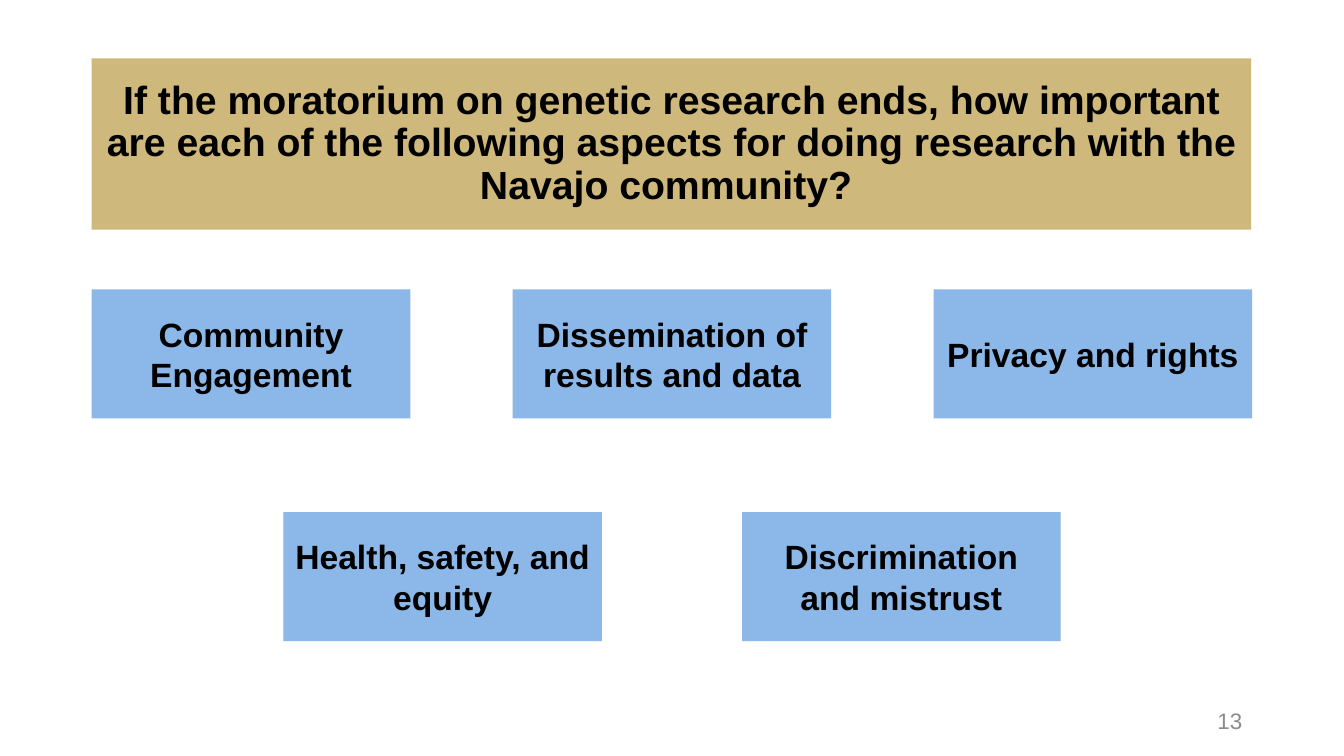
from pptx import Presentation
from pptx.dml.color import RGBColor
from pptx.enum.shapes import MSO_SHAPE
from pptx.enum.text import MSO_ANCHOR, PP_ALIGN
from pptx.util import Inches, Pt

RECTANGLE = MSO_SHAPE.RECTANGLE
MIDDLE = MSO_ANCHOR.MIDDLE
CENTER, RIGHT = PP_ALIGN.CENTER, PP_ALIGN.RIGHT

GOLD = RGBColor(0xCF, 0xB8, 0x7C)
BLUE = RGBColor(0x8B, 0xB8, 0xE8)
BLACK = RGBColor(0, 0, 0)
GRAY = RGBColor(0x8C, 0x8C, 0x8C)

QUESTION = (
    "If the moratorium on genetic research ends, how important are each of "
    "the following aspects for doing research with the Navajo community? "
)
FIRST_ASPECTS = ["Community Engagement", "Dissemination of results and data", "Privacy and rights"]
SECOND_ASPECTS = ["Health, safety, and equity", "Discrimination and mistrust"]
ASPECT_WIDTH = 3.16


def write_text(shape, text, color, size, bold, paragraph_format):
    """Fill a shape with one formatted, vertically centred paragraph."""
    frame = shape.text_frame
    frame.word_wrap = True
    frame.vertical_anchor = MIDDLE
    paragraph = frame.paragraphs[0]
    for name, value in paragraph_format.items():
        setattr(paragraph, name, value)
    run = paragraph.add_run()
    run.text = text
    font_format = {"name": "Arial", "size": Pt(size), "bold": bold}
    for name, value in font_format.items():
        setattr(run.font, name, value)
    run.font.color.rgb = color


def add_panel(slide, box, text, fill, size, line_spacing):
    """Draw a flat filled rectangle with bold centred text."""
    shape = slide.shapes.add_shape(RECTANGLE, *map(Inches, box))
    shape.shadow.inherit = False
    shape.fill.solid()
    shape.fill.fore_color.rgb = fill
    shape.line.fill.background()
    paragraph_format = {"alignment": CENTER, "line_spacing": line_spacing}
    write_text(shape, text, BLACK, size, True, paragraph_format)


def add_aspect_row(slide, box, aspects):
    """Spread the aspect panels evenly from edge to edge of the box."""
    left, top, width, height = box
    pitch = (width - ASPECT_WIDTH) / (len(aspects) - 1)
    for index, aspect in enumerate(aspects):
        panel = (left + index * pitch, top, ASPECT_WIDTH, height)
        add_panel(slide, panel, aspect, BLUE, 24, 1.0)


def add_page_number(slide, box, number):
    """Write the page number at the right of the box."""
    shape = slide.shapes.add_textbox(*map(Inches, box))
    write_text(shape, number, GRAY, 16, False, {"alignment": RIGHT})


def main():
    """Build and save the slide."""
    presentation = Presentation()
    presentation.slide_width = Inches(13.33)
    presentation.slide_height = Inches(7.5)
    slide = presentation.slides.add_slide(presentation.slide_layouts[6])
    add_panel(slide, (0.91, 0.58, 11.5, 1.7), QUESTION, GOLD, 28, 0.9)
    add_page_number(slide, (9.42, 6.95, 3, 0.4), "13")
    add_aspect_row(slide, (0.91, 2.87, 11.51, 1.28), FIRST_ASPECTS)
    add_aspect_row(slide, (2.81, 5.08, 7.71, 1.28), SECOND_ASPECTS)
    presentation.save("out.pptx")


if __name__ == "__main__":
    main()
